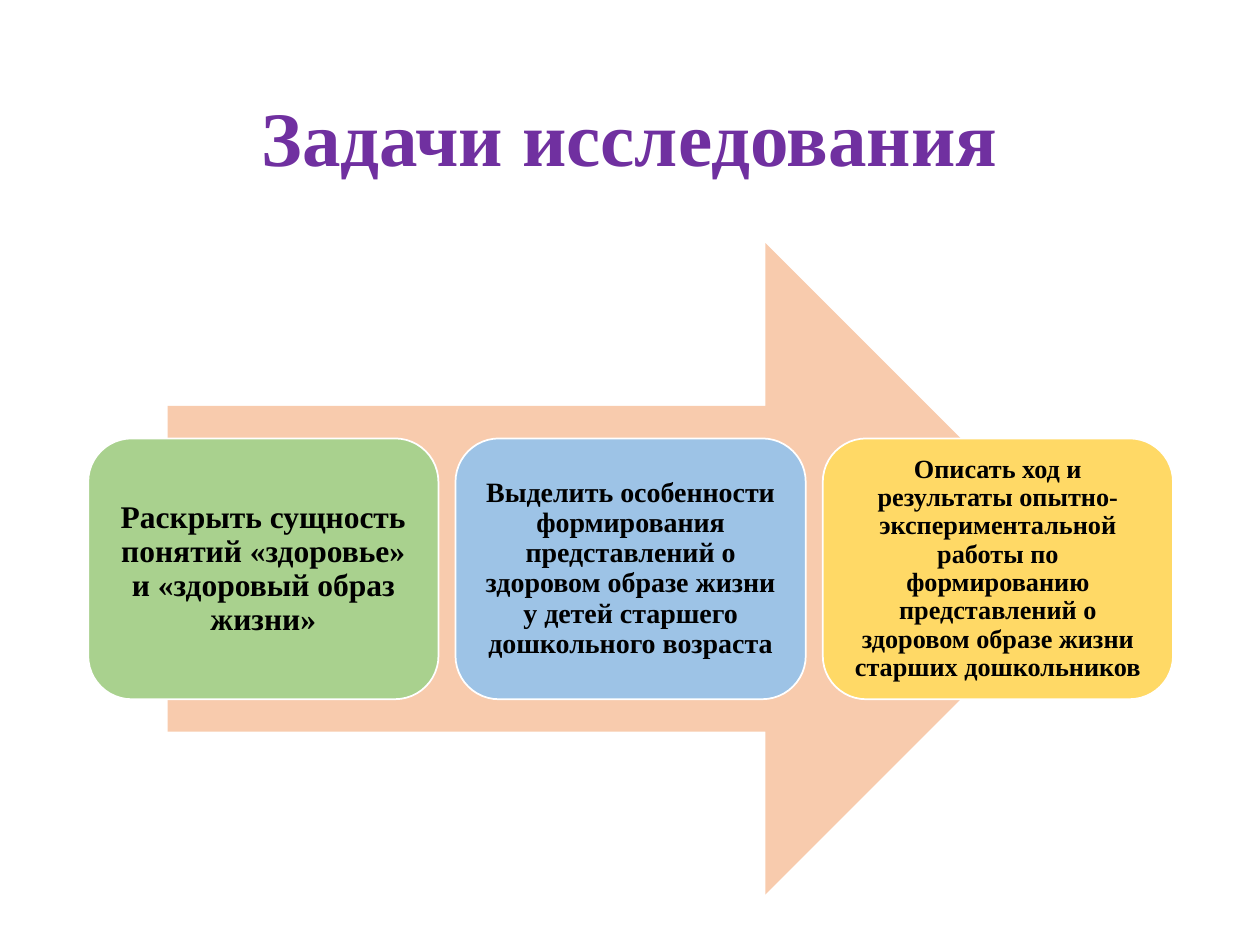
from pptx import Presentation
from pptx.dml.color import RGBColor
from pptx.enum.shapes import MSO_SHAPE
from pptx.enum.text import MSO_ANCHOR, MSO_AUTO_SIZE, PP_ALIGN
from pptx.util import Inches, Pt

ARROW = MSO_SHAPE.RIGHT_ARROW
ROUNDED = MSO_SHAPE.ROUNDED_RECTANGLE
MIDDLE = MSO_ANCHOR.MIDDLE
CENTER = PP_ALIGN.CENTER
NO_FIT = MSO_AUTO_SIZE.NONE

COLORS = {
    "title": "7030A0",
    "text": "000000",
    "outline": "FFFFFF",
    "arrow": "F8CBAD",
    "green": "A9D18E",
    "blue": "9DC3E6",
    "yellow": "FFD966",
}


def write_text(shape, text, size, color, margin_x=0.07, margin_y=0.07):
    frame = shape.text_frame
    frame.word_wrap = True
    frame.auto_size = NO_FIT
    frame.vertical_anchor = MIDDLE
    frame.margin_left = frame.margin_right = Inches(margin_x)
    frame.margin_top = frame.margin_bottom = Inches(margin_y)
    para = frame.paragraphs[0]
    para.alignment = CENTER
    para.line_spacing = 0.9
    para.space_before = Pt(0)
    span = para.add_run()
    span.text = text
    span.font.name = "Times New Roman"
    span.font.size = Pt(size)
    span.font.bold = True
    span.font.color.rgb = RGBColor.from_string(COLORS[color])


deck = Presentation()
deck.slide_width = Inches(10)
deck.slide_height = Inches(7.5)
page = deck.slides.add_slide(deck.slide_layouts[5])

title = page.shapes.title
title.left, title.top = Inches(0.69), Inches(0.4)
title.width, title.height = Inches(8.62), Inches(1.45)
write_text(title, "Задачи исследования", 44, "title", margin_x=0.1, margin_y=0.05)

arrow = page.shapes.add_shape(ARROW, Inches(1.33), Inches(1.93), Inches(7.33), Inches(5.17))
arrow.shadow.inherit = False
arrow.fill.solid()
arrow.fill.fore_color.rgb = RGBColor.from_string(COLORS["arrow"])
arrow.line.fill.background()

tasks = [
    ("green", 18, 0.07, "Раскрыть сущность понятий «здоровье» и «здоровый образ жизни»"),
    ("blue", 16, 0.07, "Выделить особенности формирования представлений о здоровом образе "
     "жизни у детей старшего дошкольного возраста"),
    ("yellow", 15, 0.06, "Описать ход и результаты опытно-экспериментальной работы по "
     "формированию представлений о здоровом образе жизни старших дошкольников"),
]
first_left, box_width, gap = 0.7, 2.78, 0.135

for index, (color, size, margin, text) in enumerate(tasks):
    left = first_left + index * (box_width + gap)
    box = page.shapes.add_shape(ROUNDED, Inches(left), Inches(3.48), Inches(box_width), Inches(2.07))
    box.shadow.inherit = False
    box.fill.solid()
    box.fill.fore_color.rgb = RGBColor.from_string(COLORS[color])
    box.line.color.rgb = RGBColor.from_string(COLORS["outline"])
    box.line.width = Pt(1)
    write_text(box, text, size, "text", margin_x=margin, margin_y=margin)

deck.save("out.pptx")
